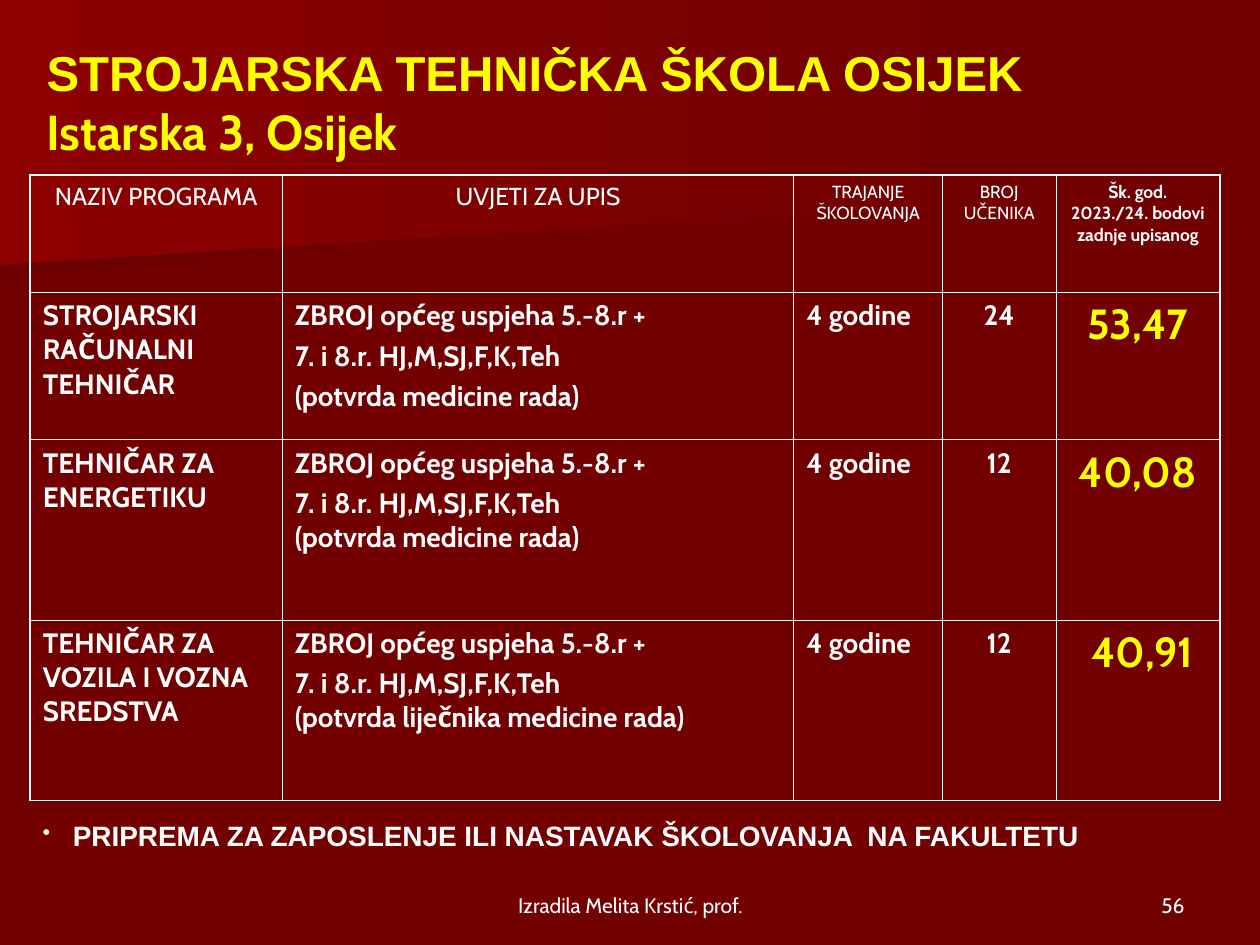
from dataclasses import dataclass

from lxml.etree import SubElement
from pptx import Presentation
from pptx.dml.color import RGBColor
from pptx.enum.text import MSO_ANCHOR as Anchor, MSO_AUTO_SIZE as Fit, PP_ALIGN as Align
from pptx.oxml import parse_xml
from pptx.oxml.ns import nsdecls, qn
from pptx.util import Inches, Pt

HUES = {"base": "720000", "dark": "6B0000", "glow": "8C0000",
        "white": "FFFFFF", "gold": "FFFF00"}
UNIT = Inches(0.1)
COLS = (20, 40.6, 11.8, 9, 13)
ROWS = (9.3, 11.7, 14.3, 14.3)
THIN, THICK = 0.45, 1.08


@dataclass
class Style:
    size: float
    hue: str = "white"
    bold: bool = True
    font: str = "Cabin"
    align: Align = Align.LEFT
    space: float = 0


@dataclass
class Box:
    x: float
    y: float
    w: float
    h: float

    def place(self) -> tuple:
        return tuple(grid(n) for n in (self.x, self.y, self.w, self.h))


@dataclass
class Course:
    name: str
    doctor: str
    gap: float
    seats: str
    score: str


HEAD = Style(14, bold=False, align=Align.CENTER, space=3.5)
SMALL = Style(10, bold=False, align=Align.CENTER, space=2.5)
LAST = Style(10, align=Align.CENTER, space=2.5)
BODY = Style(16, space=4)
TERM = Style(16, space=3.5)
COUNT = Style(16, align=Align.CENTER, space=4)
SCORE = Style(24, "gold", align=Align.CENTER, space=4)

HEADS = (("NAZIV PROGRAMA", HEAD), ("UVJETI ZA UPIS", HEAD),
         ("TRAJANJE ŠKOLOVANJA", SMALL), ("BROJ UČENIKA", SMALL),
         ("Šk. god. 2023./24. bodovi zadnje upisanog", LAST))
COURSES = (
    Course("STROJARSKI RAČUNALNI TEHNIČAR", "(potvrda medicine rada)", 3.5, "24", "53,47"),
    Course("TEHNIČAR ZA ENERGETIKU", "(potvrda medicine rada)", 0, "12", "40,08"),
    Course("TEHNIČAR ZA VOZILA I VOZNA SREDSTVA", "(potvrda liječnika medicine rada)",
           0, "12", " 40,91"),
)


def grid(n: float) -> int:
    """Turn grid cells into a length."""
    return round(n * UNIT)


def color(name: str) -> RGBColor:
    """Look up a named colour."""
    return RGBColor.from_string(HUES[name])


def write(frame, lines: list, lead: float = 1.0) -> None:
    """Fill a text frame with one styled run per paragraph."""
    frame.word_wrap = True
    for i, (text, style) in enumerate(lines):
        para = frame.add_paragraph() if i else frame.paragraphs[0]
        para.alignment = style.align
        para.line_spacing = lead
        para.space_before = Pt(style.space)
        run = para.add_run()
        run.text = text
        font = run.font
        font.name, font.size, font.bold = style.font, Pt(style.size), style.bold
        font.color.rgb = color(style.hue)


def add_text(slide, box: Box, text: str, style: Style, anchor: Anchor):
    """Add a text box and return its frame."""
    frame = slide.shapes.add_textbox(*box.place()).text_frame
    frame.vertical_anchor = anchor
    write(frame, [(text, style)])
    return frame


def add_band(slide, points: list, start: str, end: str) -> None:
    """Draw a gradient band as a closed outline."""
    form = slide.shapes.build_freeform(*points[0], scale=UNIT)
    form.add_line_segments(points[1:], close=True)
    band = form.convert_to_shape()
    band.shadow.inherit = False
    band.line.fill.background()
    band.fill.gradient()
    band.fill.gradient_angle = 180
    for stop, name in zip(band.fill.gradient_stops, (start, end)):
        stop.color.rgb = color(name)


def add_edges(cell, widths: dict) -> None:
    """Set the border lines of a cell."""
    props = cell._tc.get_or_add_tcPr()
    for i, (side, width) in enumerate(widths.items()):
        props.insert(i, parse_xml(
            f'<a:ln{side} {nsdecls("a")} w="{Pt(width)}"><a:solidFill>'
            f'<a:srgbClr val="{HUES["white"]}"/></a:solidFill></a:ln{side}>'))


def row_cells(course: Course) -> list:
    """List the cell texts of one course."""
    terms = [("ZBROJ općeg uspjeha 5.-8.r +", TERM), ("7. i 8.r. HJ,M,SJ,F,K,Teh", TERM),
             (course.doctor, Style(16, space=course.gap))]
    return [[(course.name, BODY)], terms, [("4 godine", BODY)],
            [(course.seats, COUNT)], [(course.score, SCORE)]]


def add_grid(slide) -> None:
    """Add the table of courses."""
    box = Box(2.4, 13.9, sum(COLS), sum(ROWS))
    table = slide.shapes.add_table(len(ROWS), len(COLS), *box.place()).table
    table.first_row = table.horz_banding = False
    for col, width in zip(table.columns, COLS):
        col.width = grid(width)
    data = [[[head] for head in HEADS]] + [row_cells(c) for c in COURSES]
    for r, (row, height) in enumerate(zip(data, ROWS)):
        table.rows[r].height = grid(height)
        for c, lines in enumerate(row):
            cell = table.cell(r, c)
            cell.fill.background()
            write(cell.text_frame, lines, 1.01)
            add_edges(cell, {"L": THIN if c else THICK,
                             "R": THICK if c == len(COLS) - 1 else THIN,
                             "T": THIN if r else THICK, "B": THIN})


def add_bullet(frame) -> None:
    """Give the first paragraph a small hanging bullet."""
    props = frame.paragraphs[0]._p.get_or_add_pPr()
    props.set("marL", str(grid(2.4)))
    props.set("indent", str(-grid(2.4)))
    tint = SubElement(props, qn("a:buClr"))
    SubElement(tint, qn("a:srgbClr"), val=HUES["white"])
    SubElement(props, qn("a:buSzPct"), val="80000")
    SubElement(props, qn("a:buChar"), char="•")


def main() -> None:
    """Build the slide and save it."""
    deck = Presentation()
    deck.slide_width, deck.slide_height = grid(100), grid(75)
    slide = deck.slides.add_slide(deck.slide_layouts[5])
    back = slide.background.fill
    back.solid()
    back.fore_color.rgb = color("base")
    add_band(slide, [(77.8, 15.3), (0, 21.6), (0, 10.1), (77.9, 10.1), (77.8, 12.8)],
             "base", "dark")
    add_band(slide, [(79.1, 16.2), (0, 20.8), (0, 0), (79.2, 0)], "base", "glow")

    title = slide.shapes.title
    slide.shapes._spTree.append(title._element)
    title.left, title.top, title.width, title.height = Box(2.7, 3, 92.3, 10.1).place()
    title.text_frame.auto_size = Fit.NONE
    title.text_frame.vertical_anchor = Anchor.MIDDLE
    write(title.text_frame, [("STROJARSKA TEHNIČKA ŠKOLA OSIJEK", Style(28, "gold", font="Arial")),
                             ("Istarska 3, Osijek", Style(28, "gold"))])
    add_grid(slide)
    add_bullet(add_text(slide, Box(2.4, 64.5, 95.3, 7.7),
                        "PRIPREMA ZA ZAPOSLENJE ILI NASTAVAK ŠKOLOVANJA  NA FAKULTETU",
                        Style(16, font="Arial", space=10), Anchor.TOP))
    add_text(slide, Box(34.2, 68.3, 31.7, 5), "Izradila Melita Krstić, prof.",
             Style(12, bold=False, align=Align.CENTER), Anchor.BOTTOM)
    add_text(slide, Box(71.7, 68.3, 23.3, 5), "56",
             Style(12, bold=False, align=Align.RIGHT), Anchor.BOTTOM)
    deck.save("out.pptx")


if __name__ == "__main__":
    main()
